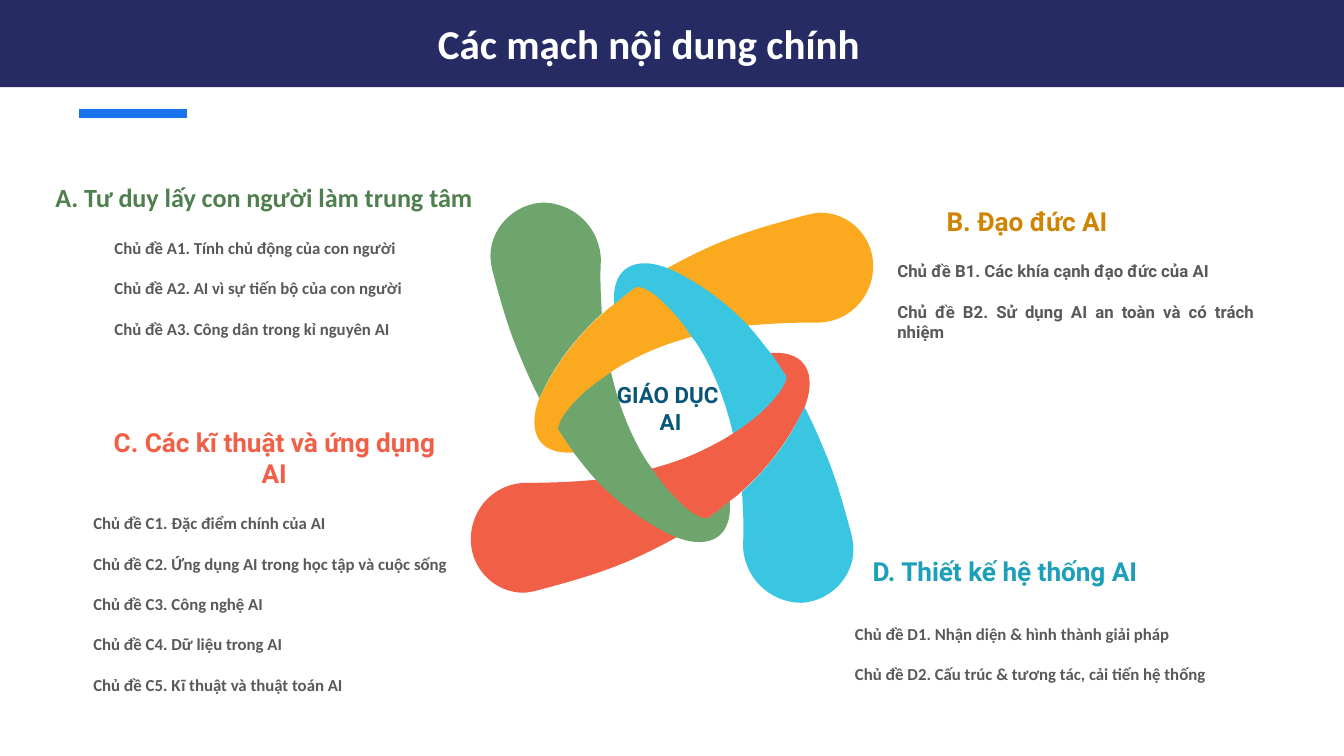
from pptx import Presentation, util as u
from pptx.dml import color
from pptx.enum import shapes, text
from pptx.oxml import ns, xmlchemy

COLS, ROWS = 133.3, 75
CELL = u.Inches(0.1)
GAP = 14.4
WHEEL = (46.7, 20.1, 39.9, 39.7)
GRAY = "595959"

GOLD = [
    [(347, 10), (374, 10, 398, 32, 399, 61), (400, 94, 374, 120, 342, 119),
     (319, 119, 297, 120, 275, 122), (220, 133), (197, 139, 176, 147, 156, 158),
     (150, 161, 145, 164, 139, 168), (128, 176, 116, 184, 106, 194),
     (99, 202, 89, 212, 87, 222), (86, 224, 86, 225, 87, 226),
     (92, 233, 97, 241, 102, 248), (100, 248, 98, 248, 95, 248),
     (61, 247, 58, 219, 68, 194), (69, 192, 70, 190, 71, 188),
     (86, 158, 106, 132, 131, 110), (134, 107, 138, 104, 142, 101),
     (149, 95, 155, 90, 162, 85), (164, 84), (169, 81, 179, 73, 195, 65),
     (215, 54, 235, 44, 256, 36), (282, 26, 308, 19, 334, 12),
     (339, 11, 343, 10, 347, 10)],
]
BLUE = [
    [(328, 397), (296, 397, 270, 371, 270, 339), (271, 322, 270, 304, 269, 287),
     (293, 265, 314, 239, 328, 209), (329, 207, 330, 205, 331, 203),
     (340, 220, 347, 237, 354, 254), (364, 279, 371, 305, 378, 331),
     (378, 332), (386, 364, 361, 395, 328, 397)],
    [(313, 175), (313, 173, 313, 172, 312, 171), (307, 164, 303, 156, 297, 149),
     (290, 140, 283, 131, 275, 122), (254, 100, 230, 82, 202, 68),
     (200, 67, 197, 66, 195, 65), (170, 55, 143, 59, 142, 93),
     (142, 95, 142, 98, 142, 101), (149, 95, 155, 90, 162, 85), (164, 84),
     (165, 84, 166, 83, 168, 84), (178, 86, 188, 96, 196, 104),
     (205, 113, 212, 122, 219, 133), (224, 139, 228, 146, 232, 153),
     (245, 177, 254, 203, 260, 229), (272, 221, 283, 213, 293, 203),
     (301, 195, 310, 185, 313, 175)],
]
PETALS = [(GOLD, True, "F15F47"), (BLUE, True, "6EA56C"),
          (GOLD, False, "FBA91E"), (BLUE, False, "3AC6E1")]

TOPICS = [
    ((84.8, 54.5, 29.7, 4.2), (84.8, 61.4, 40.8, 9.1), "1C9FB8", "Roboto", "Calibri",
     "D. Thiết kế hệ thống AI",
     ["Chủ đề D1. Nhận diện & hình thành giải pháp",
      "Chủ đề D2. Cấu trúc & tương tác, cải tiến hệ thống"]),
    ((10.4, 41.7, 33.6, 7.3), (9.25, 50.4, 35.9, 19.2), "F15F47", "Roboto", "Calibri",
     "C. Các kĩ thuật và ứng dụng AI",
     ["Chủ đề C1. Đặc điểm chính của AI",
      "Chủ đề C2. Ứng dụng AI trong học tập và cuộc sống",
      "Chủ đề C3. Công nghệ AI",
      "Chủ đề C4. Dữ liệu trong AI",
      "Chủ đề C5. Kĩ thuật và thuật toán AI"]),
    ((87, 19.8, 29.7, 4.2), (89, 25.4, 35.4, 9.1), "CF8404", "Roboto", "Roboto",
     "B. Đạo đức AI",
     ["Chủ đề B1. Các khía cạnh đạo đức của AI",
      "Chủ đề B2. Sử dụng AI an toàn và có trách nhiệm"]),
    ((4.4, 17.4, 43.5, 4.2), (11.35, 23.1, 29.7, 11.1), "4F7F4E", "Calibri", "Calibri",
     "A. Tư duy lấy con người làm trung tâm",
     ["Chủ đề A1. Tính chủ động của con người",
      "Chủ đề A2. AI vì sự tiến bộ của con người",
      "Chủ đề A3. Công dân trong kỉ nguyên AI"]),
]


def cells(*nums):
    return [round(n * CELL) for n in nums]


def tint(part, code):
    if hasattr(part, "solid"):
        part.solid()
        part = part.fore_color
    part.rgb = color.RGBColor.from_string(code)


def write(shape, lines, size, face, code, align="CENTER", anchor="TOP", gap=0, pad=0.05):
    frame = shape.text_frame
    frame.word_wrap = True
    frame.auto_size = text.MSO_AUTO_SIZE.NONE
    frame.vertical_anchor = text.MSO_ANCHOR[anchor]
    frame.margin_left = frame.margin_right = 0
    frame.margin_top = frame.margin_bottom = u.Inches(pad)
    for row, line in enumerate(lines):
        para = frame.add_paragraph() if row else frame.paragraphs[0]
        para.alignment = text.PP_ALIGN[align]
        para.space_before = u.Pt(gap if row else 0)
        run = para.add_run()
        run.text = line
        run.font.size = u.Pt(size)
        run.font.name = face
        run.font.bold = True
        tint(run.font.color, code)


def label(slide, box, lines, size, face, code, **style):
    shape = slide.shapes.add_textbox(*cells(*box))
    write(shape, lines, size, face, code, **style)


def banner(slide, box):
    left, top, width, height = box
    band = slide.shapes.add_shape(shapes.MSO_SHAPE.RECTANGLE, *cells(*box))
    band.shadow.inherit = False
    band.line.fill.background()
    tint(band.fill, "272B64")
    title = slide.shapes.title
    title.left, title.top, title.width, title.height = cells(
        left - 4.6, top + 1.85, width + 4.6, 4.9)
    write(title, ["Các mạch nội dung chính"], 29.33, "Calibri", "FFFFFF", pad=0)
    slide.shapes._spTree.append(title._element)
    line = top + height + 2.6
    rule = slide.shapes.add_connector(
        shapes.MSO_CONNECTOR.STRAIGHT, *cells(left + 7.8, line, left + 18.5, line))
    rule._element.spPr.append(xmlchemy.OxmlElement("a:effectLst"))
    rule.line.width = u.Pt(6)
    tint(rule.line.fill, "1973EB")


def bend(shape, parts):
    lines = list(shape._element.iter(ns.qn("a:lnTo")))
    for line, spots in zip(lines, parts):
        if len(spots) == 1:
            continue
        curve = xmlchemy.OxmlElement("a:cubicBezTo")
        for x, y in spots:
            point = xmlchemy.OxmlElement("a:pt")
            point.set("x", str(x - shape.left))
            point.set("y", str(y - shape.top))
            curve.append(point)
        line.getparent().replace(line, curve)


def petal(slide, box, loops, turned, code):
    left, top, width, height = box

    def place(part):
        pairs = [(x / 10, y / 10) for x, y in zip(part[::2], part[1::2])]
        if turned:
            pairs = [(width - x, height - y) for x, y in pairs]
        return [cells(left + x, top + y) for x, y in pairs]

    build, bends = None, []
    for loop in loops:
        start, *parts = [place(part) for part in loop]
        if build is None:
            build = slide.shapes.build_freeform(*start[0])
        else:
            build.move_to(*start[0])
        build.add_line_segments([part[-1] for part in parts], close=True)
        bends += parts
    shape = build.convert_to_shape()
    bend(shape, bends)
    shape.shadow.inherit = False
    shape.line.fill.background()
    tint(shape.fill, code)


def wheel(slide, box):
    for loops, turned, code in PETALS:
        petal(slide, box, loops, turned, code)
    left, top, width, height = box
    label(slide, (left + 12.7, top + 17.1, 14.2, 6.4), ["GIÁO DỤC ", "AI"],
          16, "Roboto", "095578", anchor="BOTTOM")


def topic(slide, head, body, code, face, font, name, items):
    label(slide, head, [name], 18.67, face, code, anchor="BOTTOM")
    label(slide, body, items, 12, font, GRAY, align="JUSTIFY", gap=GAP)


def main():
    deck = Presentation()
    deck.slide_width, deck.slide_height = cells(COLS, ROWS)
    slide = deck.slides.add_slide(deck.slide_layouts[5])
    banner(slide, (0, 0, COLS, 8.65))
    wheel(slide, WHEEL)
    for entry in TOPICS:
        topic(slide, *entry)
    deck.save("out.pptx")


if __name__ == "__main__":
    main()
